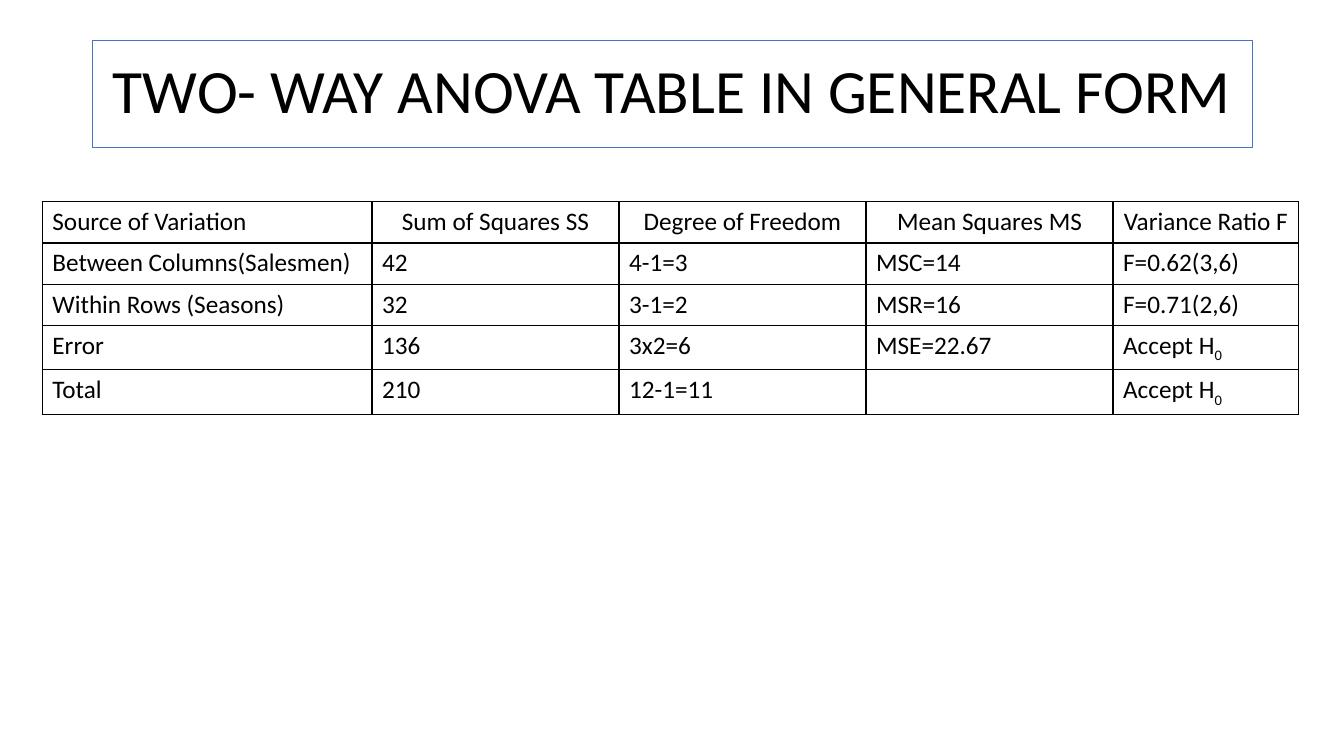
"""Build a slide with a two-way ANOVA table under a framed title."""
from lxml.etree import SubElement
from pptx import Presentation
from pptx.dml.color import RGBColor
from pptx.enum.shapes import MSO_SHAPE
from pptx.enum.text import MSO_ANCHOR, PP_ALIGN
from pptx.oxml.ns import qn
from pptx.util import Inches, Pt

BLACK = RGBColor(0x00, 0x00, 0x00)
WHITE = RGBColor(0xFF, 0xFF, 0xFF)
BLUE = RGBColor(0x44, 0x72, 0xC4)
FONT = "Calibri"

COL_WIDTHS = [3.27, 2.45, 2.45, 2.45, 1.84]
ROW_HEIGHT = 0.41
ACCEPT = "Accept H_0"
ROWS = [
    ["Source of Variation", "Sum of Squares SS", "Degree of Freedom",
     "Mean Squares MS", "Variance Ratio F"],
    ["Between Columns(Salesmen)", "42", "4-1=3", "MSC=14", "F=0.62(3,6)"],
    ["Within Rows (Seasons)", "32", "3-1=2", "MSR=16", "F=0.71(2,6)"],
    ["Error", "136", "3x2=6", "MSE=22.67", ACCEPT],
    ["Total", "210", "12-1=11", "", ACCEPT],
]


def set_font(p, size):
    p.font.name = FONT
    p.font.size = Pt(size)
    p.font.color.rgb = BLACK


def add_borders(cell):
    tc_pr = cell._tc.get_or_add_tcPr()
    for i, side in enumerate(("a:lnL", "a:lnR", "a:lnT", "a:lnB")):
        ln = tc_pr.makeelement(qn(side), {"w": str(Pt(1))})
        fill = SubElement(ln, qn("a:solidFill"))
        SubElement(fill, qn("a:srgbClr"), val=str(BLACK))
        tc_pr.insert(i, ln)


prs = Presentation()
prs.slide_width = Inches(13.33)
prs.slide_height = Inches(7.5)
s = prs.slides.add_slide(prs.slide_layouts[6])

title = s.shapes.add_shape(MSO_SHAPE.RECTANGLE, Inches(0.92), Inches(0.4),
                           Inches(11.5), Inches(1.06))
title.shadow.inherit = False
title.fill.background()
title.line.color.rgb = BLUE
title.line.width = Pt(0.75)
tf = title.text_frame
tf.word_wrap = True
tf.vertical_anchor = MSO_ANCHOR.MIDDLE
p = tf.paragraphs[0]
p.text = "TWO- WAY ANOVA TABLE IN GENERAL FORM"
p.alignment = PP_ALIGN.CENTER
p.line_spacing = 0.9
set_font(p, 44)

table = s.shapes.add_table(
    len(ROWS), len(COL_WIDTHS), Inches(0.42), Inches(2),
    Inches(sum(COL_WIDTHS)), Inches(ROW_HEIGHT * len(ROWS))).table
table.first_row = False
table.horz_banding = False
for col, width in zip(table.columns, COL_WIDTHS):
    col.width = Inches(width)

for i, row in enumerate(ROWS):
    table.rows[i].height = Inches(ROW_HEIGHT)
    for j, text in enumerate(row):
        cell = table.cell(i, j)
        cell.fill.solid()
        cell.fill.fore_color.rgb = WHITE
        add_borders(cell)
        p = cell.text_frame.paragraphs[0]
        set_font(p, 18)
        if i == 0 and j > 0:
            p.alignment = PP_ALIGN.CENTER
        base, _, subscript = text.partition("_")
        if base:
            p.add_run().text = base
        if subscript:
            r = p.add_run()
            r.text = subscript
            r.font._element.set("baseline", "-25000")

prs.save("out.pptx")
